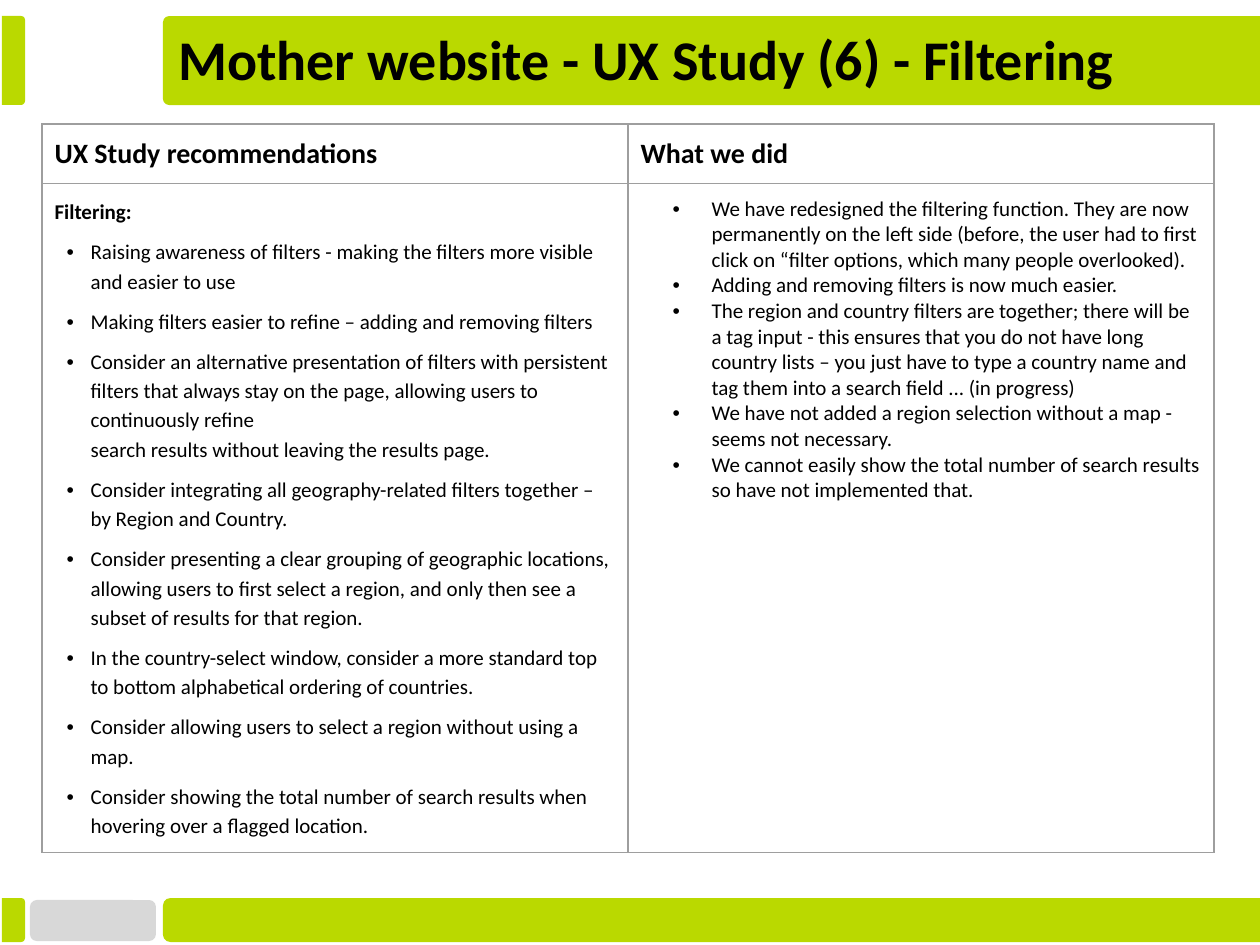
from lxml.etree import SubElement
from pptx import Presentation
from pptx.dml.color import RGBColor
from pptx.enum.shapes import MSO_SHAPE as SHAPE
from pptx.enum.text import MSO_ANCHOR as ANCHOR
from pptx.oxml.ns import qn
from pptx.util import Emu, Pt

LIME = RGBColor(0xBA, 0xD9, 0x00)
LIGHT_GREY = RGBColor(0xD8, 0xD8, 0xD8)
BLACK = RGBColor(0, 0, 0)
BORDER = RGBColor(0x9E, 0x9E, 0x9E)


def px(count):
    return Emu(round(count * 914400 / 126))


def write(paragraph, text, size, bold=False, indent=0, hanging=0, bullet=False):
    properties = paragraph._p.get_or_add_pPr()
    properties.set("marL", str(px(indent)))
    properties.set("indent", str(px(-hanging)))
    if bullet:
        color = SubElement(properties, qn("a:buClr"))
        SubElement(color, qn("a:srgbClr"), val=str(BLACK))
        SubElement(properties, qn("a:buFont"), typeface="Arial")
        SubElement(properties, qn("a:buChar"), char="•")
    for number, line in enumerate(text.split("\n")):
        if number:
            paragraph.add_line_break()
        run = paragraph.add_run()
        run.text = line
        run.font.name = "Calibri"
        run.font.size = Pt(size)
        run.font.bold = bold
        run.font.color.rgb = BLACK


deck = Presentation()
deck.slide_width, deck.slide_height = px(1260), px(945)
slide = deck.slides.add_slide(deck.slide_layouts[6])

footer_tab = slide.shapes.add_shape(SHAPE.ROUNDED_RECTANGLE, px(30), px(900), px(126), px(41))
footer_tab.shadow.inherit = False
footer_tab.fill.solid()
footer_tab.fill.fore_color.rgb = LIGHT_GREY
footer_tab.line.fill.background()

for top, height, wide_rounding in [(16, 89, 0.07), (898, 44, 0.17)]:
    for left, width, turn, rounding in [(2, 23, 90, 0.17), (163, 1097, 270, wide_rounding)]:
        shift = (width - height) / 2
        bar = slide.shapes.add_shape(
            SHAPE.ROUND_2_SAME_RECTANGLE, px(left + shift), px(top - shift), px(height), px(width))
        bar.rotation = turn
        bar.adjustments[0] = rounding
        bar.adjustments[1] = 0
        bar.shadow.inherit = False
        bar.fill.solid()
        bar.fill.fore_color.rgb = LIME
        bar.line.fill.background()

headings = ["UX Study recommendations", "What we did"]
recommendations = [
    "Raising awareness of filters - making the filters more visible and easier to use",
    "Making filters easier to refine – adding and removing filters",
    "Consider an alternative presentation of filters with persistent filters that always stay "
    "on the page, allowing users to continuously refine\n"
    "search results without leaving the results page.",
    "Consider integrating all geography-related filters together – by Region and Country.",
    "Consider presenting a clear grouping of geographic locations, allowing users to first "
    "select a region, and only then see a subset of results for that region.",
    "In the country-select window, consider a more standard top to bottom alphabetical "
    "ordering of countries.",
    "Consider allowing users to select a region without using a map.",
    "Consider showing the total number of search results when hovering over a flagged location.",
]
actions = [
    "We have redesigned the filtering function. They are now permanently on the left side "
    "(before, the user had to first click on “filter options, which many people overlooked).",
    "Adding and removing filters is now much easier.",
    "The region and country filters are together; there will be a tag input - this ensures "
    "that you do not have long country lists – you just have to type a country name and tag "
    "them into a search field ... (in progress)",
    "We have not added a region selection without a map - seems not necessary.",
    "We cannot easily show the total number of search results so have not implemented that.",
]

study = slide.shapes.add_table(2, 2, px(42), px(124), px(1172), px(727)).table
study.first_row = study.horz_banding = False
study.rows[0].height, study.rows[1].height = px(58), px(669)
for column in study.columns:
    column.width = px(586)

for cell in study.iter_cells():
    cell.margin_left = cell.margin_right = cell.margin_top = cell.margin_bottom = Pt(7.2)
    for side in ["lnL", "lnR", "lnT", "lnB"]:
        edge = SubElement(cell._tc.get_or_add_tcPr(), qn("a:" + side), w=str(Pt(0.75)))
        SubElement(SubElement(edge, qn("a:solidFill")), qn("a:srgbClr"), val=str(BORDER))
    cell.fill.background()

for column, heading in enumerate(headings):
    write(study.cell(0, column).text_frame.paragraphs[0], heading, 16, bold=True)

advice = study.cell(1, 0).text_frame
advice.paragraphs[0].line_spacing = 1.15
write(advice.paragraphs[0], "Filtering:", 12, bold=True)
for item in recommendations:
    paragraph = advice.add_paragraph()
    paragraph.level = 1
    paragraph.line_spacing = 1.15
    paragraph.space_before = Pt(6)
    write(paragraph, item, 12, indent=36, hanging=24, bullet=True)

done = study.cell(1, 1).text_frame
for number, item in enumerate(actions):
    paragraph = done.add_paragraph() if number else done.paragraphs[0]
    write(paragraph, item, 12, indent=71, hanging=39, bullet=True)

title = slide.shapes.add_textbox(px(166), px(21), px(1187), px(82)).text_frame
title.word_wrap = True
title.vertical_anchor = ANCHOR.MIDDLE
title.margin_left = title.margin_right = title.margin_top = title.margin_bottom = Pt(7.2)
title.paragraphs[0].line_spacing = 0.9
write(title.paragraphs[0], "Mother website - UX Study (6) - Filtering", 32, bold=True, indent=32, hanging=32)

deck.save("out.pptx")
